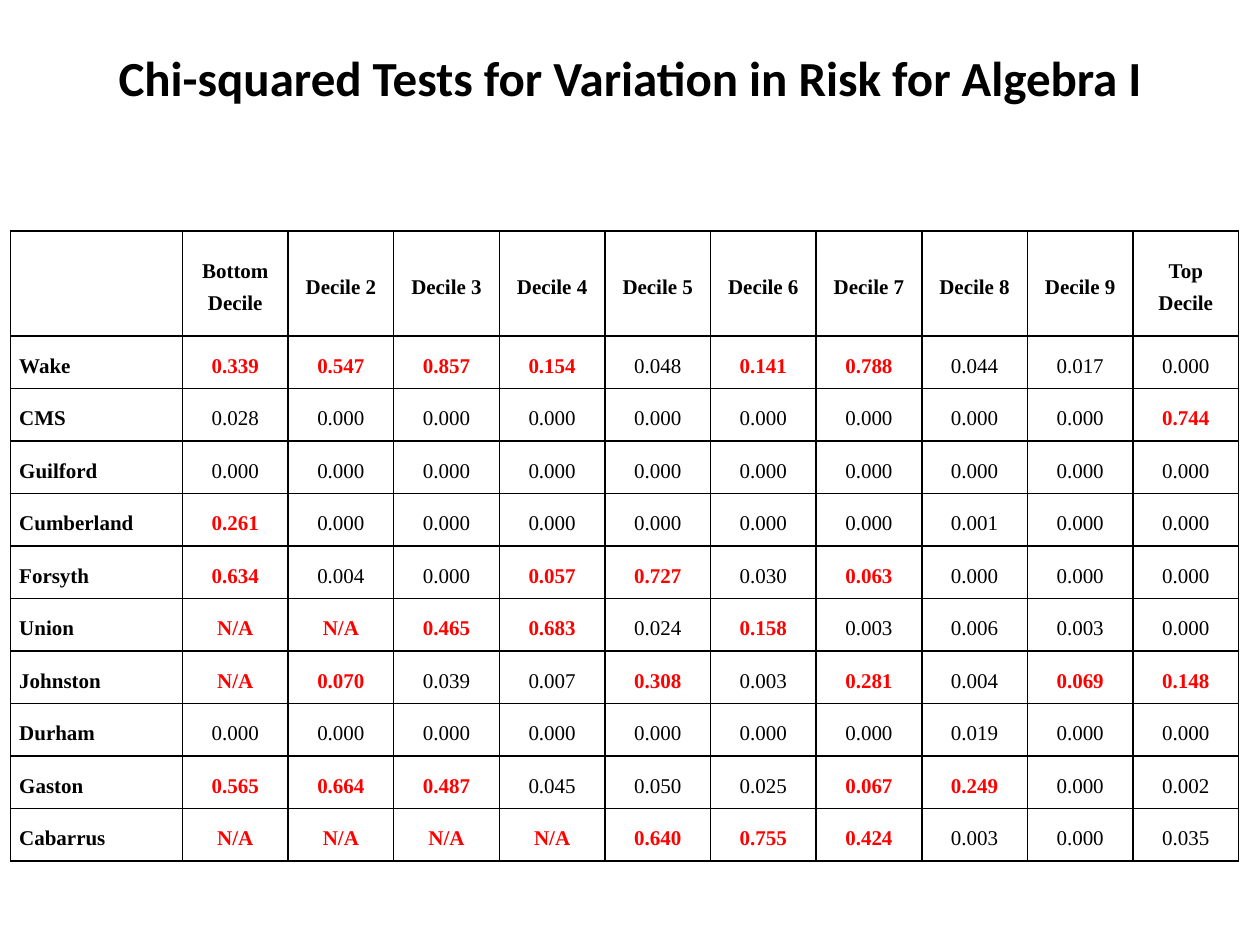
from dataclasses import dataclass

from lxml.etree import SubElement
from pptx import Presentation
from pptx.dml.color import RGBColor
from pptx.enum.text import MSO_ANCHOR, PP_ALIGN
from pptx.oxml.ns import qn
from pptx.util import Pt

BLACK, RED = "000000", "FF0000"
SIGNIFICANCE = 0.05
LABEL_WIDTH, DECILE_WIDTH = 98.3, 60.35
HEADER_HEIGHT, DISTRICT_HEIGHT = 60, 30


@dataclass
class District:
    name: str
    p_values: str


HEADINGS = ["", "Bottom Decile", *(f"Decile {n}" for n in range(2, 10)), "Top Decile"]
DISTRICTS = [
    District("Wake", "0.339 0.547 0.857 0.154 0.048 0.141 0.788 0.044 0.017 0.000"),
    District("CMS", "0.028 0.000 0.000 0.000 0.000 0.000 0.000 0.000 0.000 0.744"),
    District("Guilford", "0.000 0.000 0.000 0.000 0.000 0.000 0.000 0.000 0.000 0.000"),
    District("Cumberland", "0.261 0.000 0.000 0.000 0.000 0.000 0.000 0.001 0.000 0.000"),
    District("Forsyth", "0.634 0.004 0.000 0.057 0.727 0.030 0.063 0.000 0.000 0.000"),
    District("Union", "N/A N/A 0.465 0.683 0.024 0.158 0.003 0.006 0.003 0.000"),
    District("Johnston", "N/A 0.070 0.039 0.007 0.308 0.003 0.281 0.004 0.069 0.148"),
    District("Durham", "0.000 0.000 0.000 0.000 0.000 0.000 0.000 0.019 0.000 0.000"),
    District("Gaston", "0.565 0.664 0.487 0.045 0.050 0.025 0.067 0.249 0.000 0.002"),
    District("Cabarrus", "N/A N/A N/A N/A 0.640 0.755 0.424 0.003 0.000 0.035"),
]

TITLE_FONT = {"name": "Calibri", "size": Pt(28), "bold": True}
TABLE_FONT = {"name": "Times New Roman", "size": Pt(12)}
TITLE_FRAME = {"word_wrap": True, "vertical_anchor": MSO_ANCHOR.MIDDLE}
CELL_FORMAT = {
    "vertical_anchor": MSO_ANCHOR.MIDDLE,
    "margin_left": Pt(5),
    "margin_right": Pt(5),
    "margin_top": Pt(0),
    "margin_bottom": Pt(0),
}


def color(hex_value: str) -> RGBColor:
    return RGBColor.from_string(hex_value)


def apply(target, values: dict) -> None:
    for attribute, value in values.items():
        setattr(target, attribute, value)


def write(paragraph, text: str, font: dict, hex_value: str, align) -> None:
    paragraph.alignment = align
    run = paragraph.add_run()
    run.text = text
    apply(run.font, font)
    run.font.color.rgb = color(hex_value)


def add_borders(cell) -> None:
    properties = cell._tc.get_or_add_tcPr()
    for side in ("lnL", "lnR", "lnT", "lnB"):
        line = SubElement(properties, qn(f"a:{side}"), w=str(Pt(1)))
        fill = SubElement(line, qn("a:solidFill"))
        SubElement(fill, qn("a:srgbClr"), val=BLACK)


def fill_cell(cell, text: str, bold: bool, hex_value: str, align) -> None:
    apply(cell, CELL_FORMAT)
    add_borders(cell)
    cell.fill.background()
    paragraph = cell.text_frame.paragraphs[0]
    paragraph.line_spacing = Pt(18)
    if text:
        write(paragraph, text, {**TABLE_FONT, "bold": bold}, hex_value, align)


def add_title(slide, text: str) -> None:
    title = slide.shapes.add_textbox(Pt(36), Pt(21.6), Pt(648), Pt(44.64)).text_frame
    apply(title, TITLE_FRAME)
    write(title.paragraphs[0], text, TITLE_FONT, BLACK, PP_ALIGN.CENTER)


def add_risk_table(slide) -> None:
    row_count, column_count = len(DISTRICTS) + 1, len(HEADINGS)
    width = LABEL_WIDTH + DECILE_WIDTH * (column_count - 1)
    height = HEADER_HEIGHT + DISTRICT_HEIGHT * len(DISTRICTS)
    table = slide.shapes.add_table(
        row_count, column_count, Pt(6), Pt(132), Pt(width), Pt(height)
    ).table
    apply(table, {"first_row": False, "horz_banding": False})
    for index, column in enumerate(table.columns):
        column.width = Pt(DECILE_WIDTH if index else LABEL_WIDTH)
    for index, row in enumerate(table.rows):
        row.height = Pt(DISTRICT_HEIGHT if index else HEADER_HEIGHT)

    # Decile headings
    for index, heading in enumerate(HEADINGS):
        fill_cell(table.cell(0, index), heading, True, BLACK, PP_ALIGN.CENTER)

    # District rows: red and bold where variation is not significant
    for row, district in enumerate(DISTRICTS, start=1):
        fill_cell(table.cell(row, 0), district.name, True, BLACK, PP_ALIGN.LEFT)
        for column, p_value in enumerate(district.p_values.split(), start=1):
            flagged = p_value == "N/A" or float(p_value) > SIGNIFICANCE
            fill_cell(table.cell(row, column), p_value, flagged,
                      RED if flagged else BLACK, PP_ALIGN.CENTER)


def main() -> None:
    deck = Presentation()
    apply(deck, {"slide_width": Pt(720), "slide_height": Pt(540)})
    slide = deck.slides.add_slide(deck.slide_layouts[6])
    add_title(slide, "Chi-squared Tests for Variation in Risk for Algebra I")
    add_risk_table(slide)
    deck.save("out.pptx")


if __name__ == "__main__":
    main()
